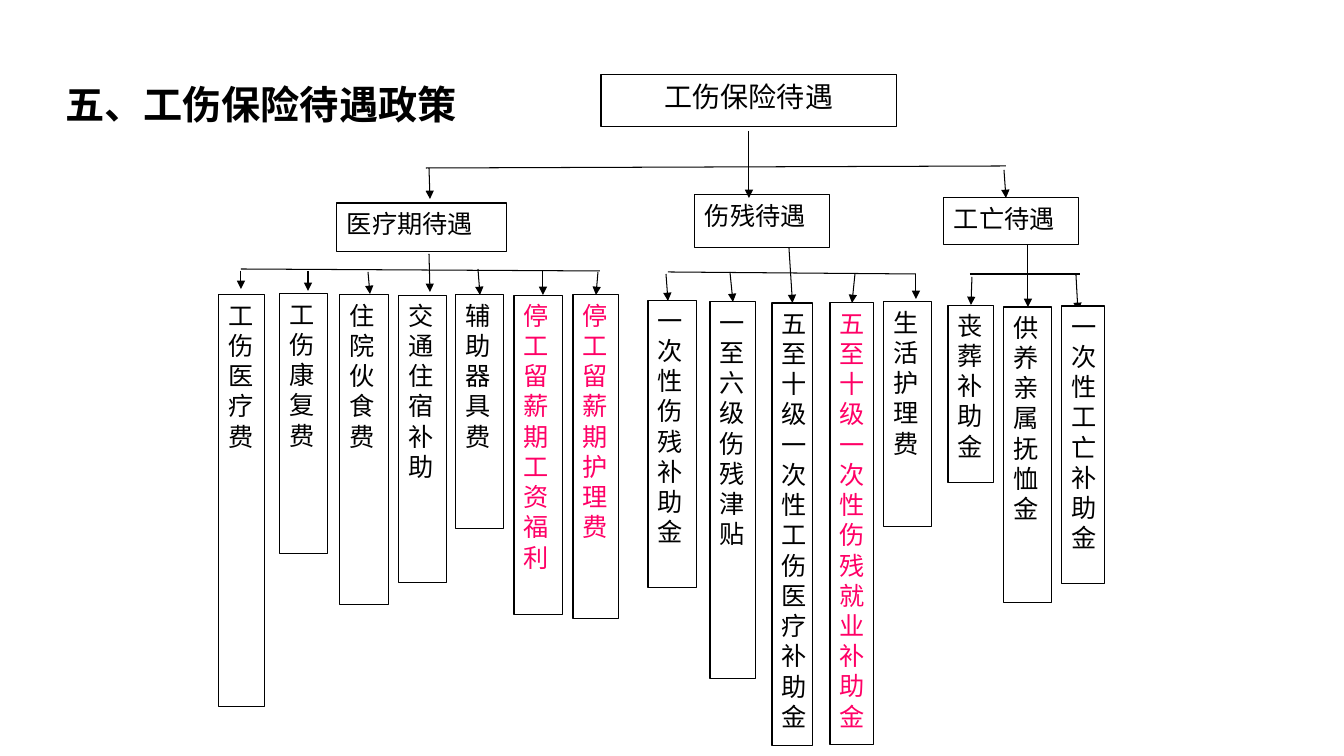
import pptx
import pptx.util
import pptx.dml.color
import pptx.enum.shapes
import pptx.enum.text
import pptx.oxml
import pptx.oxml.ns

PX = 9071.43  # EMU in one px
BLACK, WHITE, PINK = "000000", "FFFFFF", "FF0066"
LEFT = pptx.enum.text.PP_ALIGN.LEFT
MID = pptx.enum.text.PP_ALIGN.CENTER
SNAP = 3  # px within which an arrow joins the middle of a box's top

# Each leaf: text, box (left, top, width, height), arrow (x1, y1, x2, y2), colour
CARE = [
    ("工伤医疗费", (219, 295, 46, 412), (241, 271, 241, 289), BLACK),
    ("工伤康复费", (280, 294, 48, 260), (308, 271, 308, 291), BLACK),
    ("住院伙食费", (340, 295, 49, 310), (368, 272, 370, 294), BLACK),
    ("交通住宿补助", (399, 295, 48, 288), (429, 254, 430, 292), BLACK),
    ("辅助器具费", (456, 295, 48, 234), (478, 269, 478, 293), BLACK),
    ("停工留薪期工资福利", (514, 295, 49, 320), (543, 271, 543, 295), PINK),
    ("停工留薪期护理费", (573, 295, 46, 324), (598, 272, 598, 295), PINK),
]
INJURY = [
    ("一次性伤残补助金", (648, 300, 49, 288), (666, 274, 668, 301), BLACK),
    ("一至六级伤残津贴", (710, 302, 46, 377), (730, 272, 732, 302), BLACK),
    ("五至十级一次性工伤医疗补助金", (772, 303, 41, 443), (789, 248, 790, 305), BLACK),
    ("五至十级一次性伤残就业补助金", (830, 303, 44, 442), (855, 274, 855, 304), PINK),
    ("生活护理费", (884, 302, 48, 225), (916, 274, 916, 299), BLACK),
]
DEATH = [
    ("丧葬补助金", (948, 305, 46, 178), (972, 277, 972, 307), BLACK),
    ("供养亲属抚恤金", (1004, 307, 48, 296), (1028, 245, 1028, 308), BLACK),
    ("一次性工亡补助金", (1062, 306, 43, 278), (1076, 275, 1078, 311), BLACK),
]
# Each branch: text, head box, arrow into the head, bar, leaves
TREE = [
    ("医疗期待遇", (337, 203, 170, 49), (429, 168, 430, 199), (241, 269, 600, 271), CARE),
    ("伤残待遇", (695, 195, 135, 53), (749, 131, 749, 198), (668, 272, 916, 274), INJURY),
    ("工亡待遇", (944, 198, 135, 47), (1004, 170, 1006, 198), (970, 274, 1080, 274), DEATH),
]


def emu(nums):
    return [pptx.util.Emu(round(n * PX)) for n in nums]


def rgb(code):
    return pptx.dml.color.RGBColor.from_string(code)


def write(shape, text, size, color=BLACK, face="Calibri", bold=False, align=LEFT):
    frame = shape.text_frame
    frame.text = text
    para = frame.paragraphs[0]
    para.alignment = align
    font = para.runs[0].font
    font.name, font.size, font.bold = face, pptx.util.Pt(size), bold
    font.color.rgb = rgb(color)
    east = pptx.oxml.parse_xml(
        f'<a:ea {pptx.oxml.ns.nsdecls("a")} typeface="{face}"/>')
    para.runs[0]._r.rPr.find(pptx.oxml.ns.qn("a:latin")).addnext(east)


def add_box(slide, text, box, size=18, color=BLACK, align=LEFT):
    shape = slide.shapes.add_shape(
        pptx.enum.shapes.MSO_SHAPE.RECTANGLE, *emu(box))
    shape.shadow.inherit = False
    shape.fill.solid()
    shape.fill.fore_color.rgb = rgb(WHITE)
    shape.line.color.rgb = rgb(BLACK)
    shape.line.width = pptx.util.Pt(0.75)
    shape.text_frame.word_wrap = True
    shape.text_frame.vertical_anchor = pptx.enum.text.MSO_ANCHOR.TOP
    write(shape, text, size, color, align=align)
    return shape


def add_line(slide, ends, arrow=False):
    line = slide.shapes.add_connector(
        pptx.enum.shapes.MSO_CONNECTOR.STRAIGHT, *emu(ends))
    line.line.color.rgb = rgb(BLACK)
    line.line.width = pptx.util.Pt(0.75)
    names = pptx.oxml.ns.nsdecls("a")
    if arrow:
        line.line._get_or_add_ln().append(
            pptx.oxml.parse_xml(f'<a:tailEnd {names} type="triangle"/>'))
    line._element.spPr.append(pptx.oxml.parse_xml(f"<a:effectLst {names}/>"))
    return line


def add_leaf(slide, text, box, ends, color):
    """Draw one benefit below its arrow, joined where the arrow is centred."""
    line = add_line(slide, ends, arrow=True)
    shape = add_box(slide, text, box, color=color)
    left, top, width, _ = box
    if abs(ends[2] - left - width / 2) <= SNAP and abs(ends[3] - top) <= SNAP:
        line.end_connect(shape, 0)


def add_branch(slide, text, box, feed, bar, leaves):
    add_line(slide, bar)
    for leaf in leaves:
        add_leaf(slide, *leaf)
    add_box(slide, text, box)
    add_line(slide, feed, arrow=True)


def add_title(slide, text, box):
    title = slide.shapes.title
    title.left, title.top, title.width, title.height = emu(box)
    title.text_frame.word_wrap = False
    title.text_frame.auto_size = pptx.enum.text.MSO_AUTO_SIZE.NONE
    title.text_frame.vertical_anchor = pptx.enum.text.MSO_ANCHOR.MIDDLE
    write(title, text, 28, face="Noto Sans CJK SC", bold=True)


def main():
    deck = pptx.Presentation()
    deck.slide_width, deck.slide_height = emu((1344, 756))
    slide = deck.slides.add_slide(deck.slide_layouts[5])
    add_title(slide, "五、工伤保险待遇政策", (55, 75, 422, 57))
    add_box(slide, "工伤保险待遇", (601, 75, 296, 52), size=20, align=MID)
    add_line(slide, (426, 168, 1006, 166))
    for branch in TREE:
        add_branch(slide, *branch)
    deck.save("out.pptx")


if __name__ == "__main__":
    main()
